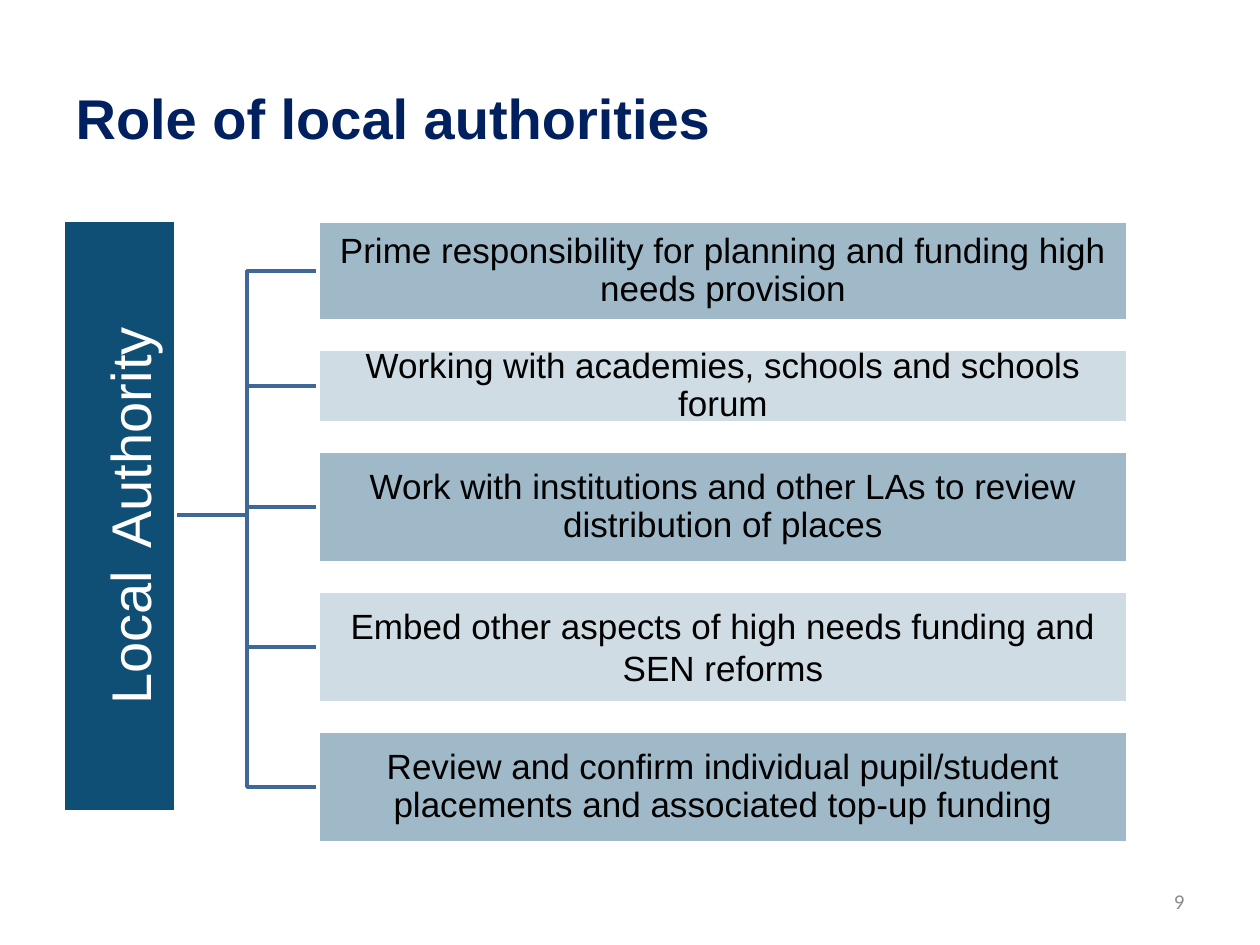
from dataclasses import dataclass
from typing import Any, Optional

from pptx import Presentation
from pptx.dml.color import RGBColor
from pptx.enum.shapes import MSO_SHAPE
from pptx.enum.text import MSO_ANCHOR, PP_ALIGN
from pptx.util import Emu, Pt

PX = 914400 / 126
RECTANGLE = MSO_SHAPE.RECTANGLE
MIDDLE = MSO_ANCHOR.MIDDLE
LEFT, CENTER, RIGHT = PP_ALIGN.LEFT, PP_ALIGN.CENTER, PP_ALIGN.RIGHT

NAVY = RGBColor(0x00, 0x20, 0x60)
DEEP_BLUE = RGBColor(0x10, 0x4F, 0x75)
MID_BLUE = RGBColor(0x9F, 0xB9, 0xC8)
PALE_BLUE = RGBColor(0xCF, 0xDC, 0xE3)
BRANCH_BLUE = RGBColor(0x3F, 0x67, 0x97)
GREY = RGBColor(0x8C, 0x8C, 0x8C)
WHITE = RGBColor(0xFF, 0xFF, 0xFF)
BLACK = RGBColor(0x00, 0x00, 0x00)

ROLE_LEFT, ROLE_WIDTH = 318, 810
ROLE_TOP, ROLE_GAP = 221, 28
TRUNK_X, FORK_X, TRUNK_Y = 175, 247, 515


@dataclass(frozen=True)
class Box:
    left: int
    top: int
    width: int
    height: int


@dataclass(frozen=True)
class Run:
    text: str
    size: int
    color: RGBColor
    font: str = "Arial"
    bold: bool = False


@dataclass(frozen=True)
class Role:
    text: str
    height: int
    fill: RGBColor
    spacing: Optional[float] = 0.9


ROLES = [
    Role("Prime responsibility for planning and funding high needs provision", 100, MID_BLUE),
    Role("Working with academies, schools and schools forum", 74, PALE_BLUE),
    Role("Work with institutions and other LAs to review distribution of places", 112, MID_BLUE),
    Role("Embed other aspects of high needs funding and SEN reforms", 112, PALE_BLUE, None),
    Role("Review and confirm individual pupil/student placements and associated top-up funding",
         112, MID_BLUE),
]


def px(length: float) -> Emu:
    return Emu(round(length * PX))


def place(box: Box) -> list[Emu]:
    return [px(side) for side in (box.left, box.top, box.width, box.height)]


def apply(target: Any, values: dict[str, Any]) -> None:
    for name, value in values.items():
        setattr(target, name, value)


def write(shape: Any, runs: list[Run], align: Any, inset: Optional[int] = None,
          spacing: Optional[float] = None) -> None:
    frame = shape.text_frame
    apply(frame, {"word_wrap": True, "vertical_anchor": MIDDLE})
    if inset is not None:
        sides = ("margin_left", "margin_top", "margin_right", "margin_bottom")
        apply(frame, dict.fromkeys(sides, px(inset)))
    paragraph = frame.paragraphs[0]
    apply(paragraph, {"alignment": align, "line_spacing": spacing})
    for part in runs:
        run = paragraph.add_run()
        run.text = part.text
        apply(run.font, {"name": part.font, "size": Pt(part.size), "bold": part.bold})
        run.font.color.rgb = part.color


def add_panel(slide: Any, box: Box, fill: RGBColor) -> Any:
    panel = slide.shapes.add_shape(RECTANGLE, *place(box))
    panel.shadow.inherit = False
    panel.fill.solid()
    panel.fill.fore_color.rgb = fill
    panel.line.color.rgb = WHITE
    panel.line.width = Pt(2)
    return panel


def add_branch(slide: Any, role_y: float) -> None:
    builder = slide.shapes.build_freeform(TRUNK_X, TRUNK_Y, scale=PX)
    builder.add_line_segments(
        [(FORK_X, TRUNK_Y), (FORK_X, role_y), (ROLE_LEFT, role_y)], close=False)
    branch = builder.convert_to_shape()
    branch.shadow.inherit = False
    branch.fill.background()
    branch.line.color.rgb = BRANCH_BLUE
    branch.line.width = Pt(2)


def stack_roles() -> list[Box]:
    boxes, top = [], ROLE_TOP
    for role in ROLES:
        boxes.append(Box(ROLE_LEFT, top, ROLE_WIDTH, role.height))
        top += role.height + ROLE_GAP
    return boxes


def main() -> None:
    presentation = Presentation()
    apply(presentation, {"slide_width": px(1260), "slide_height": px(945)})
    slide = presentation.slides.add_slide(presentation.slide_layouts[5])

    title = slide.shapes.title
    apply(title, dict(zip(("left", "top", "width", "height"), place(Box(63, 38, 1134, 158)))))
    write(title, [Run("Role of local authorities", 32, NAVY, bold=True)], LEFT)

    role_boxes = stack_roles()
    for box in reversed(role_boxes):
        add_branch(slide, box.top + box.height / 2)

    authority = add_panel(slide, Box(-176, 460, 591, 112), DEEP_BLUE)
    authority.rotation = 270
    write(authority, [Run("Local", 32, WHITE), Run(" ", 56, WHITE, "Calibri"),
                      Run("Authority", 32, WHITE)], CENTER, 3, 0.9)

    for role, box in zip(ROLES, role_boxes):
        panel = add_panel(slide, box, role.fill)
        write(panel, [Run(role.text, 20, BLACK)], CENTER, 2, role.spacing)

    page_number = slide.shapes.add_textbox(*place(Box(903, 876, 294, 50)))
    write(page_number, [Run("9", 12, GREY, "Calibri")], RIGHT)

    presentation.save("out.pptx")


if __name__ == "__main__":
    main()
